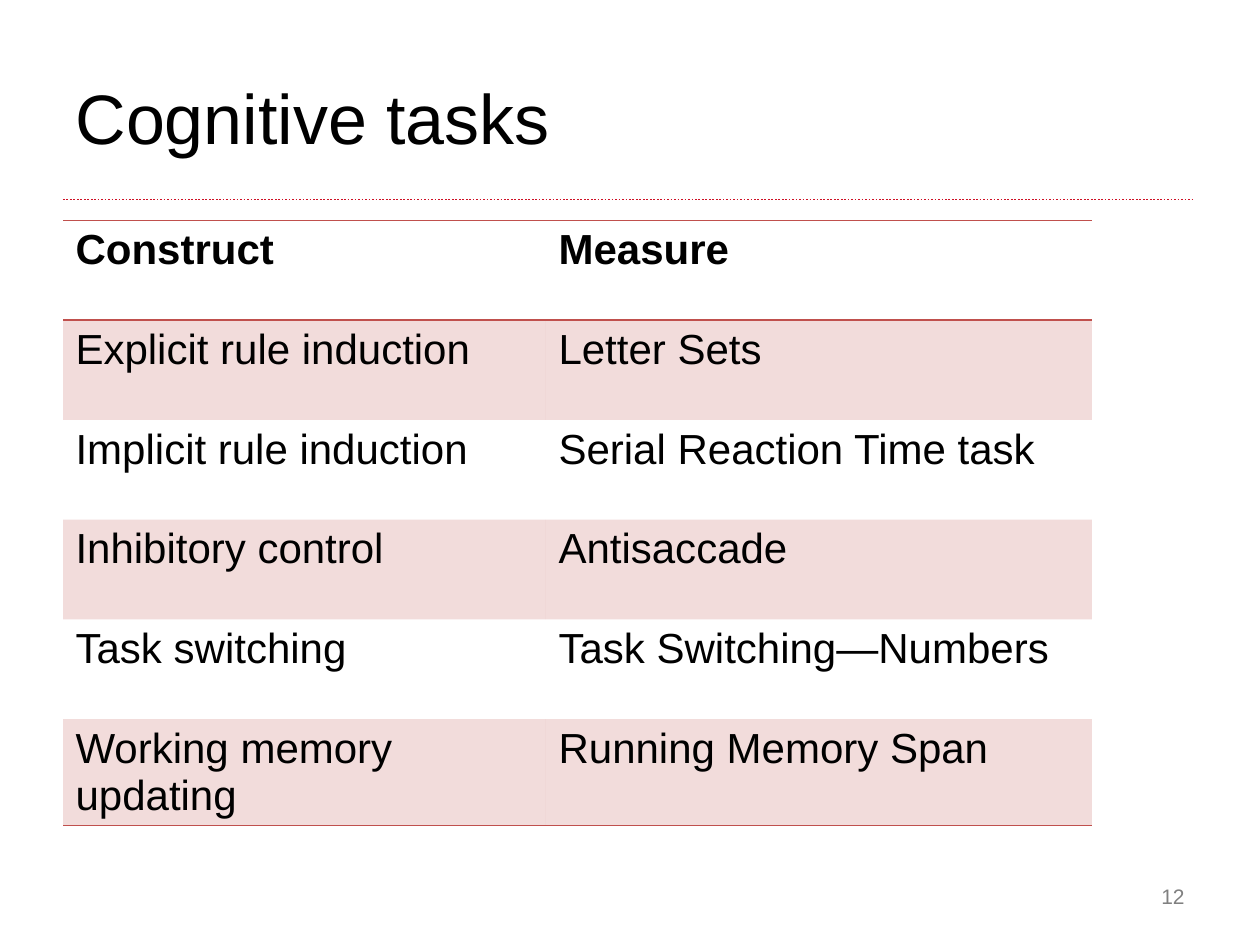
"""Build the cognitive tasks slide with its table of constructs and measures."""
from dataclasses import dataclass

from lxml import etree
from pptx import Presentation
from pptx.dml.color import RGBColor
from pptx.enum.dml import MSO_LINE
from pptx.enum.shapes import MSO_CONNECTOR
from pptx.enum.text import MSO_ANCHOR, PP_ALIGN
from pptx.oxml.ns import qn
from pptx.util import Pt

LEFT, RIGHT = PP_ALIGN.LEFT, PP_ALIGN.RIGHT
MIDDLE = MSO_ANCHOR.MIDDLE
DOTS = MSO_LINE.ROUND_DOT
STRAIGHT = MSO_CONNECTOR.STRAIGHT
FONT = "Arial"
BLACK, GRAY, RED, ROSE = "000000", "808080", "CE1126", "C0504D"
PLAIN = "{2D5ABB26-0587-4C30-8999-92F81FD0307C}"
WIDTHS = (276, 312)
HEIGHT = 57


@dataclass
class Row:
    construct: str
    measure: str
    bold: bool = False
    band: bool = False
    edges: tuple[str, ...] = ()


ROWS = (
    Row("Construct", "Measure", bold=True, edges=("a:lnT", "a:lnB")),
    Row("Explicit rule induction", "Letter Sets", band=True),
    Row("Implicit rule induction", "Serial Reaction Time task"),
    Row("Inhibitory control", "Antisaccade", band=True),
    Row("Task switching", "Task Switching—Numbers"),
    Row("Working memory updating", "Running Memory Span", band=True,
        edges=("a:lnB",)),
)


def color(code: str) -> RGBColor:
    return RGBColor.from_string(code)


def write(frame, text: str, size: int, tint: str = BLACK,
          bold: bool = False, align=LEFT) -> None:
    para = frame.paragraphs[0]
    para.alignment = align
    run = para.add_run()
    run.text = text
    font = run.font
    font.name, font.size, font.bold = FONT, Pt(size), bold
    font.color.rgb = color(tint)


def place(shape, left: float, top: float, width: float, height: float) -> None:
    shape.left, shape.top = Pt(left), Pt(top)
    shape.width, shape.height = Pt(width), Pt(height)


def border(cell, edge: str) -> None:
    line = etree.SubElement(cell._tc.get_or_add_tcPr(), qn(edge), w=str(Pt(1)))
    fill = etree.SubElement(line, qn("a:solidFill"))
    etree.SubElement(fill, qn("a:srgbClr"), val=ROSE)


def shade(cell) -> None:
    cell.fill.solid()
    cell.fill.fore_color.rgb = color(ROSE)
    tint = cell._tc.tcPr.find(qn("a:solidFill")).find(qn("a:srgbClr"))
    etree.SubElement(tint, qn("a:alpha"), val="20000")


def draw_row(cells, row: Row) -> None:
    for cell, text in zip(cells, (row.construct, row.measure)):
        write(cell.text_frame, text, 24, bold=row.bold)
        for edge in row.edges:
            border(cell, edge)
        if row.band:
            shade(cell)
        else:
            cell.fill.background()


def draw_table(slide) -> None:
    frame = slide.shapes.add_table(
        len(ROWS), len(WIDTHS), Pt(36), Pt(126),
        Pt(sum(WIDTHS)), Pt(HEIGHT * len(ROWS)))
    table = frame.table
    table.horz_banding = False
    table._tbl.tblPr.find(qn("a:tableStyleId")).text = PLAIN
    for col, width in zip(table.columns, WIDTHS):
        col.width = Pt(width)
    for line, row in zip(table.rows, ROWS):
        line.height = Pt(HEIGHT)
        draw_row(line.cells, row)


def draw_rule(slide) -> None:
    rule = slide.shapes.add_connector(
        STRAIGHT, Pt(36), Pt(114), Pt(681), Pt(114))
    rule.line.color.rgb = color(RED)
    rule.line.width = Pt(1)
    rule.line.dash_style = DOTS
    etree.SubElement(rule._element.spPr, qn("a:effectLst"))


def main() -> None:
    deck = Presentation()
    deck.slide_width, deck.slide_height = Pt(720), Pt(540)
    slide = deck.slides.add_slide(deck.slide_layouts[5])
    draw_rule(slide)
    title = slide.shapes.title
    place(title, 36, 21.6, 648, 90)
    title.text_frame.vertical_anchor = MIDDLE
    write(title.text_frame, "Cognitive tasks", 40)
    draw_table(slide)
    page = slide.shapes.add_textbox(Pt(519), Pt(502), Pt(165), Pt(20))
    page.text_frame.word_wrap = True
    page.text_frame.vertical_anchor = MIDDLE
    write(page.text_frame, "12", 12, GRAY, align=RIGHT)
    deck.save("out.pptx")


if __name__ == "__main__":
    main()
